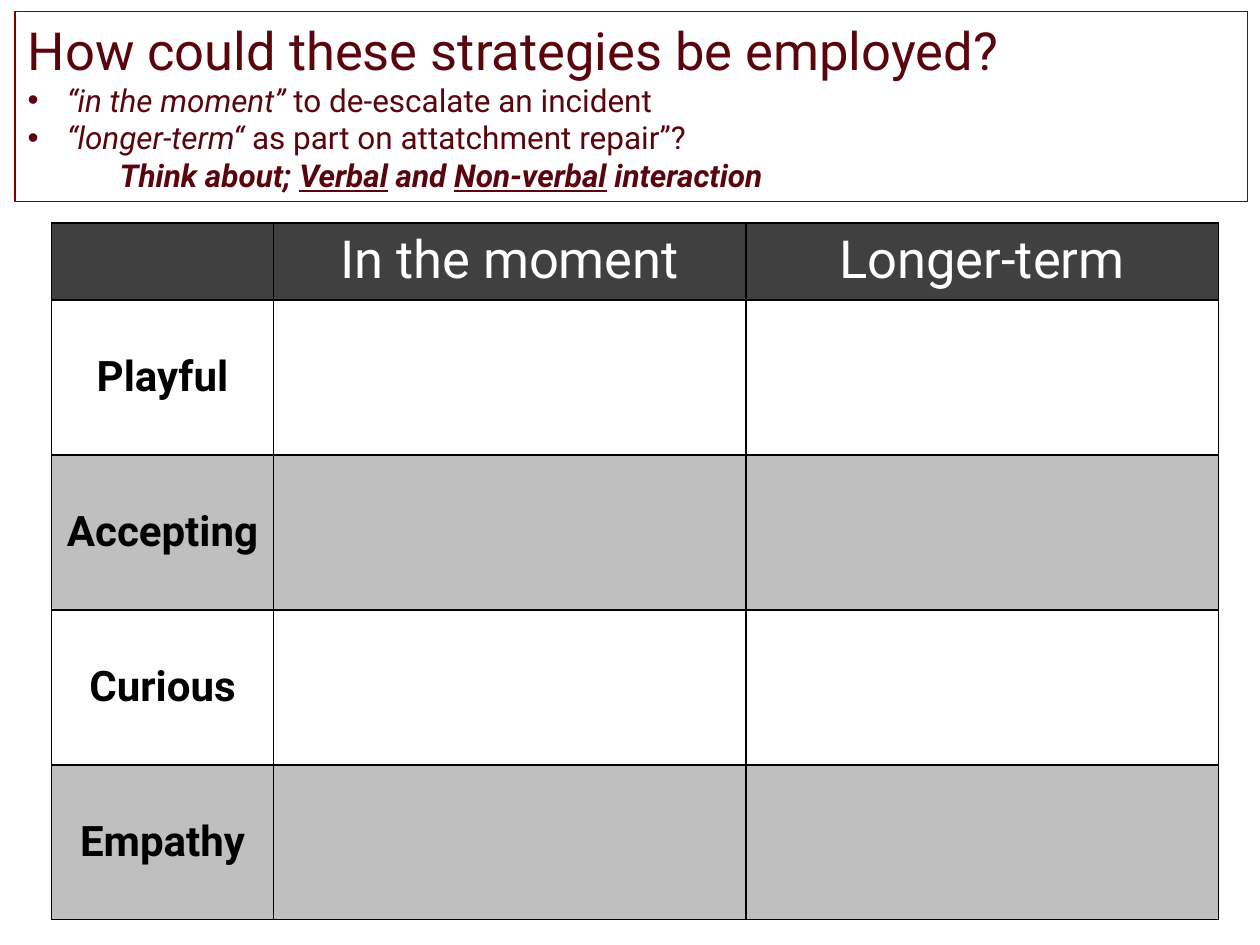
from lxml.etree import SubElement
from pptx import Presentation
from pptx.dml.color import RGBColor
from pptx.enum.text import MSO_ANCHOR as Anchor, MSO_AUTO_SIZE as AutoSize, PP_ALIGN as Align
from pptx.oxml.ns import qn
from pptx.util import Inches, Pt

MAROON = RGBColor(0x5A, 0x05, 0x0D)
FRAME_RED = RGBColor(0x80, 0x00, 0x00)
HEADER_GREY = RGBColor(0x40, 0x40, 0x40)
BAND_GREY = RGBColor(0xBF, 0xBF, 0xBF)
WHITE = RGBColor(0xFF, 0xFF, 0xFF)
BLACK = RGBColor(0x00, 0x00, 0x00)
FONT = "Roboto"


def add_borders(cell):
    properties = cell._tc.get_or_add_tcPr()
    for side in ("a:lnL", "a:lnR", "a:lnT", "a:lnB"):
        line = SubElement(properties, qn(side), w=str(Pt(1)))
        fill = SubElement(line, qn("a:solidFill"))
        SubElement(fill, qn("a:srgbClr"), val=str(BLACK))


def indent(para, left, first=0, bullet=None):
    properties = para._p.get_or_add_pPr()
    properties.set("marL", str(Inches(left)))
    properties.set("indent", str(Inches(first)))
    if bullet:
        SubElement(properties, qn("a:buFont"), typeface="Arial")
        SubElement(properties, qn("a:buChar"), char=bullet)


deck = Presentation()
deck.slide_width, deck.slide_height = Inches(10), Inches(7.5)
page = deck.slides.add_slide(deck.slide_layouts[5])

# Framed question with its prompts
box = page.shapes.title
box.left, box.top, box.width, box.height = Inches(0.12), Inches(0.09), Inches(9.78), Inches(1.51)
box.line.color.rgb = FRAME_RED
box.line.width = Pt(0.75)
frame = box.text_frame
frame.word_wrap = True
frame.auto_size = AutoSize.NONE
frame.vertical_anchor = Anchor.TOP

question = frame.paragraphs[0]
question.text = "How could these strategies be employed?"

prompts = [
    ("“in the moment” ", "to de-escalate an incident"),
    ("“longer-term“ ", "as part on attatchment repair”?"),
]
for quoted, rest in prompts:
    para = frame.add_paragraph()
    indent(para, 0.31, -0.31, "•")
    span = para.add_run()
    span.text = quoted
    span.font.italic = True
    para.add_run().text = rest

reminder = frame.add_paragraph()
indent(reminder, 0.73)
for text in ("Think about; ", "Verbal", " and ", "Non-verbal", " interaction"):
    span = reminder.add_run()
    span.text = text
    span.font.underline = text in ("Verbal", "Non-verbal")
reminder.font.bold = reminder.font.italic = True

for para in frame.paragraphs:
    para.alignment = Align.LEFT
    para.font.name = FONT
    para.font.size = Pt(18)
    para.font.color.rgb = MAROON
question.font.size = Pt(30)

# Strategy table
headings = ["", "In the moment", "Longer-term"]
strategies = ["Playful", "Accepting", "Curious", "Empathy"]
rows = [headings] + [[name, "", ""] for name in strategies]
table = page.shapes.add_table(
    len(rows), len(headings), Inches(0.41), Inches(1.77), Inches(9.26), Inches(5.53)
).table
table.first_row = table.horz_banding = False
for column, width in zip(table.columns, (1.76, 3.75, 3.75)):
    column.width = Inches(width)

for row_number, texts in enumerate(rows):
    is_header = row_number == 0
    table.rows[row_number].height = Inches(0.61 if is_header else 1.23)
    for column_number, text in enumerate(texts):
        cell = table.cell(row_number, column_number)
        add_borders(cell)
        if is_header:
            cell.fill.solid()
            cell.fill.fore_color.rgb = HEADER_GREY
        elif row_number % 2 == 0:
            cell.fill.solid()
            cell.fill.fore_color.rgb = BAND_GREY
        else:
            cell.fill.background()
        if not text:
            continue
        cell.text = text
        cell.vertical_anchor = Anchor.TOP if is_header else Anchor.MIDDLE
        para = cell.text_frame.paragraphs[0]
        para.alignment = Align.CENTER
        para.font.name = FONT
        para.font.size = Pt(30 if is_header else 24)
        para.font.bold = not is_header
        para.font.color.rgb = WHITE if is_header else BLACK

deck.save("out.pptx")
